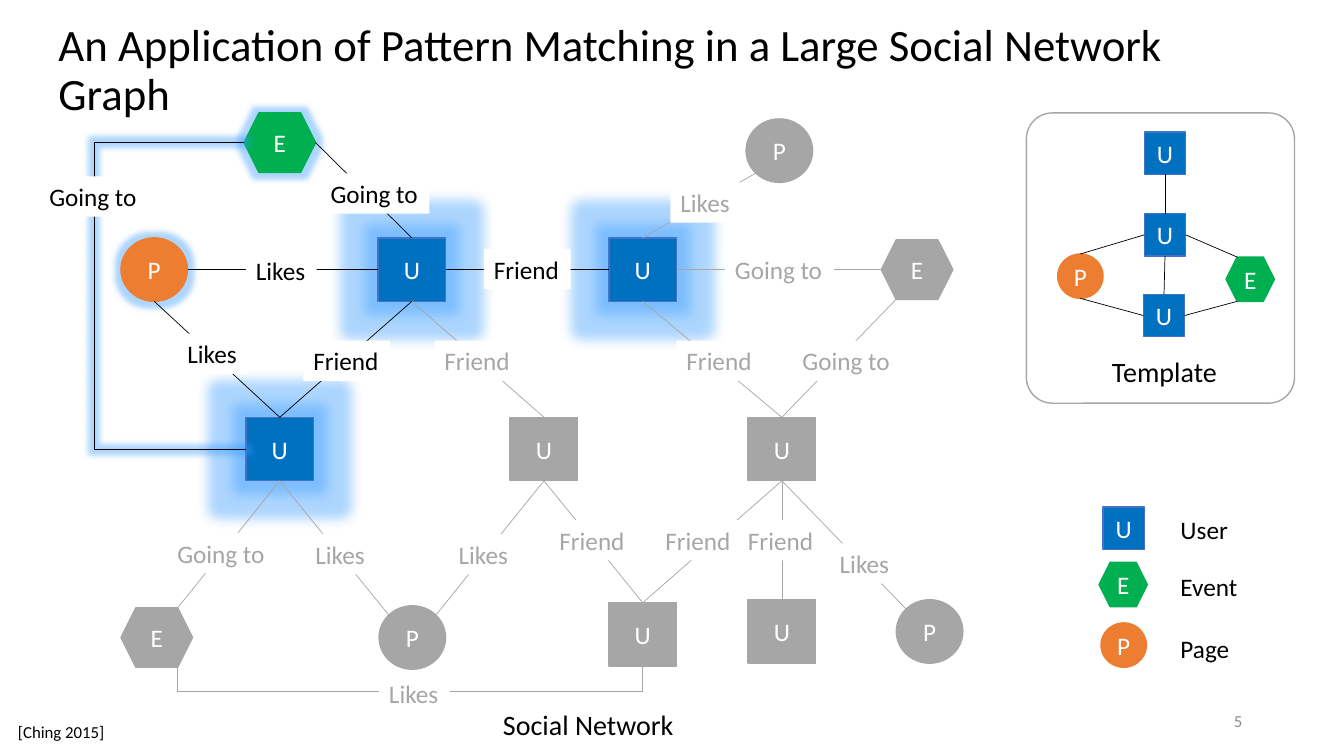
from dataclasses import dataclass
from typing import NamedTuple

from lxml.etree import SubElement
from pptx import Presentation
from pptx.dml.color import RGBColor as RGB
from pptx.enum.shapes import MSO_CONNECTOR as Link, MSO_SHAPE as Form
from pptx.enum.text import MSO_ANCHOR as Anchor, MSO_AUTO_SIZE as Auto, PP_ALIGN as Align
from pptx.oxml.ns import qn
from pptx.util import Inches, Pt


@dataclass(frozen=True)
class Theme:
    font: str = "Calibri"
    black: str = "000000"
    white: str = "FFFFFF"
    gray: str = "A6A6A6"
    number: str = "8C8C8C"
    edge: str = "4472C4"
    glow: str = "3399FF"
    title: int = 32
    head: int = 20
    body: int = 18
    small: int = 12
    thin: float = 0.5


class Kind(NamedTuple):
    form: Form
    fill: str
    line: str
    big: tuple[float, float]
    small: tuple[float, float]
    glow: float


@dataclass(frozen=True)
class Node:
    kind: str
    x: float
    y: float
    lit: bool = False
    small: bool = False

    @property
    def size(self) -> tuple[float, float]:
        return KINDS[self.kind].small if self.small else KINDS[self.kind].big

    def site(self, side: str) -> tuple[float, float]:
        """Point where an edge meets the outline: t, b, l, r or a corner."""
        w, h = self.size
        dx, dy = (0.25 * h, 0) if self.kind == "E" else (0.146 * w, 0.146 * h)
        if len(side) == 1:
            dx, dy = 0, 0
        across = dx if "l" in side else w - dx if "r" in side else w / 2
        down = dy if "t" in side else h - dy if "b" in side else h / 2
        return self.x + across, self.y + down


class Edge(NamedTuple):
    start: str
    out: str
    end: str
    into: str
    text: str = ""
    x: float = 0
    y: float = 0
    lit: bool = False


T = Theme()
KINDS = {
    "U": Kind(Form.RECTANGLE, "0070C0", T.edge, (0.67, 0.63), (0.41, 0.42), 0.25),
    "E": Kind(Form.HEXAGON, "00B050", "00B050", (0.71, 0.59), (0.48, 0.44), 0.11),
    "P": Kind(Form.OVAL, "ED7D31", "ED7D31", (0.66, 0.63), (0.45, 0.44), 0.11),
}
WIDTHS = {"Friend": 0.86, "Going to": 1.08, "Likes": 0.7}

# Social network
NET = {
    "hub": Node("U", 3.75, 2.36, True), "fan": Node("P", 1.2, 2.36, True),
    "party": Node("E", 2.42, 1.12, True), "pal": Node("U", 6.04, 2.36, True),
    "mid": Node("U", 5.06, 4.14), "mate": Node("U", 2.44, 4.14, True),
    "low": Node("U", 6.04, 5.98), "leaf": Node("U", 7.42, 5.95),
    "east": Node("U", 7.42, 4.14), "show": Node("E", 8.74, 2.38),
    "blog": Node("P", 8.89, 5.95), "fair": Node("E", 1.2, 6.03),
    "news": Node("P", 7.4, 1.18), "shop": Node("P", 3.76, 6.01),
}
EDGES = [
    Edge("hub", "r", "pal", "l", "Friend", 4.8, 2.47, True),
    Edge("hub", "b", "mid", "t", "Friend", 4.31, 3.38),
    Edge("mid", "b", "low", "t", "Friend", 5.45, 5.16),
    Edge("pal", "b", "east", "t", "Friend", 6.71, 3.38),
    Edge("east", "b", "low", "t", "Friend", 6.5, 5.16),
    Edge("hub", "b", "mate", "t", "Friend", 3.01, 3.38, True),
    Edge("leaf", "t", "east", "b", "Friend", 7.32, 5.16),
    Edge("hub", "t", "party", "r", "Going to", 3.18, 1.72, True),
    Edge("hub", "l", "fan", "r", "Likes", 2.44, 2.48, True),
    Edge("mate", "t", "fan", "b", "Likes", 1.76, 3.31, True),
    Edge("pal", "r", "show", "l", "Going to", 7.19, 2.47),
    Edge("show", "bl", "east", "t", "Going to", 7.86, 3.38),
    Edge("blog", "tl", "east", "b", "Likes", 8.23, 5.39),
    Edge("fair", "tr", "mate", "b", "Going to", 1.66, 5.29),
    Edge("news", "bl", "pal", "t", "Likes", 6.65, 1.81),
    Edge("shop", "tl", "mate", "b", "Likes", 3.03, 5.3),
    Edge("shop", "tr", "mid", "b", "Likes", 4.45, 5.3),
]

# Template graph
PLAN = {
    "top": Node("U", 11.35, 1.31, small=True), "mid": Node("U", 11.35, 2.12, small=True),
    "low": Node("U", 11.34, 2.92, small=True), "page": Node("P", 10.49, 2.52, small=True),
    "event": Node("E", 12.16, 2.55, small=True),
}
LINKS = [
    Edge("top", "b", "mid", "t", lit=True), Edge("mid", "b", "low", "t", lit=True),
    Edge("mid", "l", "page", "t", lit=True), Edge("page", "b", "low", "l", lit=True),
    Edge("mid", "r", "event", "tl", lit=True), Edge("event", "bl", "low", "r", lit=True),
]

# Legend: node, name, top and width of the name
LEGEND = [
    (Node("U", 10.94, 5.03, small=True), "User", 5.05, 0.68),
    (Node("E", 10.9, 5.58, small=True), "Event", 5.62, 0.77),
    (Node("P", 10.92, 6.18, small=True), "Page", 6.23, 0.69),
]

deck = Presentation()
deck.slide_width, deck.slide_height = Inches(13.33), Inches(7.5)
slide = deck.slides.add_slide(deck.slide_layouts[5])
shapes = slide.shapes


def write(frame, text: str, size: int, color: str, align=Align.LEFT) -> None:
    para = frame.paragraphs[0]
    para.alignment = align
    run = para.add_run()
    run.text = text
    run.font.name, run.font.size = T.font, Pt(size)
    run.font.color.rgb = RGB.from_string(color)


def label(text: str, x: float, y: float, w: float, h: float = 0.4, size: int = T.body,
          color: str = T.black, back: bool = False, align=Align.LEFT) -> None:
    box = shapes.add_textbox(Inches(x), Inches(y), Inches(w), Inches(h))
    box.text_frame.word_wrap = align == Align.RIGHT
    box.text_frame.vertical_anchor = Anchor.MIDDLE if align == Align.RIGHT else Anchor.TOP
    if back:
        box.fill.solid()
        box.fill.fore_color.rgb = RGB.from_string(T.white)
    write(box.text_frame, text, size, color, align)


def shine(effects, radius: float) -> None:
    glow = SubElement(effects, qn("a:glow"), rad=str(Inches(radius)))
    tint = SubElement(glow, qn("a:srgbClr"), val=T.glow)
    SubElement(tint, qn("a:alpha"), val="40000")


def draw(node: Node, live: bool) -> None:
    kind = KINDS[node.kind]
    box = shapes.add_shape(kind.form, *map(Inches, (node.x, node.y, *node.size)))
    box.fill.solid()
    box.fill.fore_color.rgb = RGB.from_string(kind.fill if live else T.gray)
    box.line.color.rgb = RGB.from_string(kind.line if live else T.gray)
    box.line.width = Pt(1)
    box.shadow.inherit = False
    if node.lit:
        shine(box._element.spPr.find(qn("a:effectLst")), kind.glow)
    frame = box.text_frame
    frame.margin_left = frame.margin_right = 0
    frame.vertical_anchor = Anchor.MIDDLE
    write(frame, node.kind, T.body, T.white, Align.CENTER)


def wire(start: tuple, end: tuple, color: str, form=Link.STRAIGHT):
    line = shapes.add_connector(form, *map(Inches, (*start, *end)))
    line.line.color.rgb = RGB.from_string(color)
    line.line.width = Pt(T.thin)
    return line, SubElement(line._element.spPr, qn("a:effectLst"))


def elbow(start: tuple, end: tuple, color: str, bend: float, turn: int = 0,
          glow: float = 0) -> None:
    line, effects = wire(start, end, color, Link.ELBOW)
    props = line._element.spPr
    stops = props.find(qn("a:prstGeom")).get_or_add_avLst()
    SubElement(stops, qn("a:gd"), name="adj1", fmla=f"val {round(bend * 100000)}")
    if turn:
        props.find(qn("a:xfrm")).set("rot", str(turn * 60000))
    if glow:
        shine(effects, glow)


def join(nodes: dict[str, Node], edges: list[Edge]) -> None:
    for edge in edges:
        color = T.black if edge.lit else T.gray
        wire(nodes[edge.start].site(edge.out), nodes[edge.end].site(edge.into), color)
        if edge.text:
            label(edge.text, edge.x, edge.y, WIDTHS[edge.text], color=color, back=True)


# Title and page number
title = shapes.title
title.left, title.top, title.width, title.height = map(Inches, (0.48, 0.34, 12.34, 0.74))
title.text_frame.word_wrap, title.text_frame.auto_size = True, Auto.NONE
title.text_frame.vertical_anchor = Anchor.MIDDLE
title.text_frame.paragraphs[0].line_spacing = 0.9
write(title.text_frame, "An Application of Pattern Matching in a Large Social Network Graph",
      T.title, T.black)
label("5", 9.42, 6.95, 3, size=T.small, color=T.number, align=Align.RIGHT)

# Network with its two bent edges
for node in NET.values():
    draw(node, node.lit)
join(NET, EDGES)
elbow((2.44, 4.46), (2.42, 1.41), T.black, 75, glow=0.11)
label("Going to", 0.39, 1.75, WIDTHS["Going to"], back=True)
elbow((4.06, 4.31), (4.07, 8.92), T.gray, 25, turn=90)
label("Likes", 3.76, 6.68, WIDTHS["Likes"], color=T.gray, back=True)
label("Social Network", 4.89, 6.97, 1.91, 0.44, T.head)

# Legend and source
for node, name, top, width in LEGEND:
    draw(node, True)
    label(name, 11.61, top, width)
label("[Ching 2015]", 0.08, 7.11, 1.07, 0.3, T.small)

# Template panel
for node in PLAN.values():
    draw(node, True)
join(PLAN, LINKS)
label("Template", 10.93, 3.47, 1.25, 0.44, T.head)
panel = shapes.add_shape(Form.ROUNDED_RECTANGLE, *map(Inches, (10.18, 1.12, 2.66, 2.88)))
panel.adjustments[0] = 0.097
panel.fill.background()
panel.line.color.rgb, panel.line.width = RGB.from_string(T.gray), Pt(1)
panel.shadow.inherit = False

deck.save("out.pptx")
